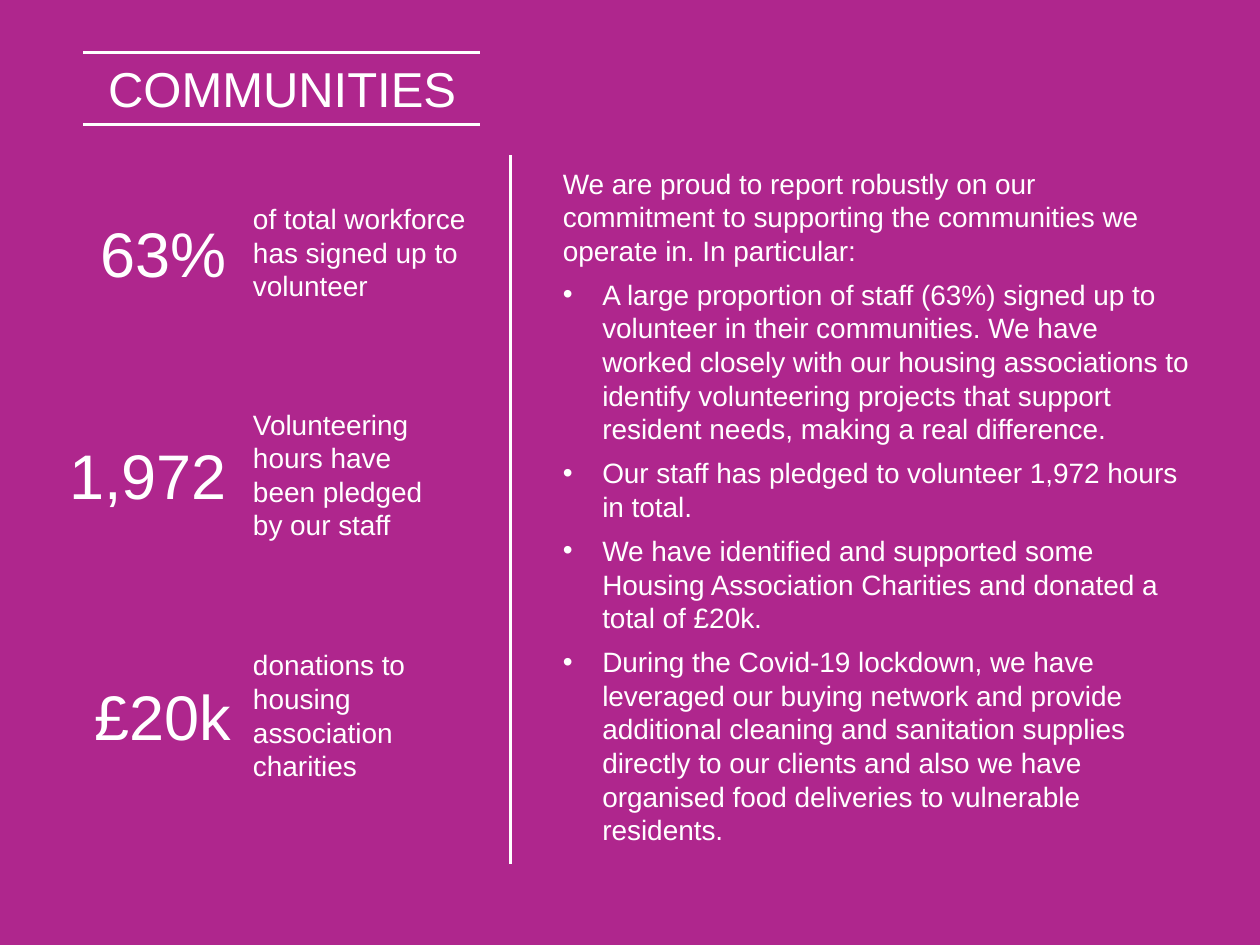
import pptx
import pptx.dml.color
import pptx.enum.shapes
import pptx.enum.text
import pptx.oxml.ns
import pptx.util
import lxml.etree

Pt = pptx.util.Pt
ALIGN = pptx.enum.text.PP_ALIGN
FONT = "Arial"
PURPLE = "AF268D"
WHITE = "FFFFFF"

INTRO = ("We are proud to report robustly on our commitment to supporting "
         "the communities we operate in. In particular:")
POINTS = [
    "A large proportion of staff (63%) signed up to volunteer in their "
    "communities. We have worked closely with our housing associations to "
    "identify volunteering projects that support resident needs, making a "
    "real difference.",
    "Our staff has pledged to volunteer 1,972 hours in total.",
    "We have identified and supported some Housing Association Charities and "
    "donated a total of £20k.",
    "During the Covid-19 lockdown, we have leveraged our buying network and "
    "provide additional cleaning and sanitation supplies directly to our "
    "clients and also we have organised food deliveries to vulnerable "
    "residents.",
]
# Figure, its left and width, caption, caption width and height, row centre
STATS = [
    ("63%", 48.2, 90, "of total workforce has signed up to volunteer",
     136.8, 65.5, 144.4),
    ("1,972", 25.2, 118.8, "Volunteering hours have been pledged by our staff",
     129.6, 85, 271.6),
    ("£20k", 42.5, 100.8, "donations to housing association charities",
     136.8, 85, 409.2),
]


def color(value):
    return pptx.dml.color.RGBColor.from_string(value)


def add_text(shapes, box, size=16, align=ALIGN.LEFT):
    """Return an empty text frame and its paragraph writer's defaults."""
    frame = shapes.add_textbox(*map(Pt, box)).text_frame
    frame.word_wrap = True
    frame.auto_size = pptx.enum.text.MSO_AUTO_SIZE.SHAPE_TO_FIT_TEXT
    return frame


def write(para, text, size=16, align=ALIGN.LEFT, after=0, bullet=False):
    para.alignment = align
    para.space_after = Pt(after)
    span = para.add_run()
    span.text = text
    span.font.name = FONT
    span.font.size = Pt(size)
    span.font.color.rgb = color(WHITE)
    if bullet:
        indent = Pt(22.5)
        properties = para._p.get_or_add_pPr()
        properties.set("marL", str(indent))
        properties.set("indent", str(-indent))
        qname = pptx.oxml.ns.qn
        lxml.etree.SubElement(properties, qname("a:buFont"), typeface=FONT)
        lxml.etree.SubElement(properties, qname("a:buChar"), char="•")


def add_label(shapes, box, text, **style):
    write(add_text(shapes, box).paragraphs[0], text, **style)


def add_rule(page, start, end):
    rule = page.shapes.add_connector(
        pptx.enum.shapes.MSO_CONNECTOR.STRAIGHT, *map(Pt, start + end))
    rule.line.color.rgb = color(WHITE)
    rule.line.width = Pt(1.5)
    lxml.etree.SubElement(rule._element.spPr,
                          pptx.oxml.ns.qn("a:effectLst"))


def add_title(page, box):
    left, top, width, height = box
    for y in (top, top + height):
        add_rule(page, (left, y), (left + width, y))
    add_label(page.shapes, (left + 5, top, width - 9.4, height),
              "COMMUNITIES", size=28, align=ALIGN.CENTER)


def add_stats(page, caption_left):
    figure_height = 51
    for figure, left, width, caption, caption_width, height, centre in STATS:
        group = page.shapes.add_group_shape()
        add_label(group.shapes,
                  (left, centre - figure_height / 2, width, figure_height),
                  figure, size=36, align=ALIGN.CENTER)
        add_label(group.shapes,
                  (caption_left, centre - height / 2, caption_width, height),
                  caption)


def add_report(page, box):
    frame = add_text(page.shapes, box)
    write(frame.paragraphs[0], INTRO, after=6)
    for point in POINTS:
        write(frame.add_paragraph(), point, after=6, bullet=True)


def main():
    deck = pptx.Presentation()
    deck.slide_width, deck.slide_height = Pt(720), Pt(540)
    page = deck.slides.add_slide(deck.slide_layouts[6])
    page.background.fill.solid()
    page.background.fill.fore_color.rgb = color(PURPLE)

    # Title between two rules
    add_title(page, (47.5, 30, 226.8, 41.3))
    # Key figures with captions
    add_stats(page, 137.5)
    # Divider and report text
    add_rule(page, (291.6, 88.6), (291.6, 493.9))
    add_report(page, (314.6, 91.4, 374.4, 399.6))

    deck.save("out.pptx")


if __name__ == "__main__":
    main()
